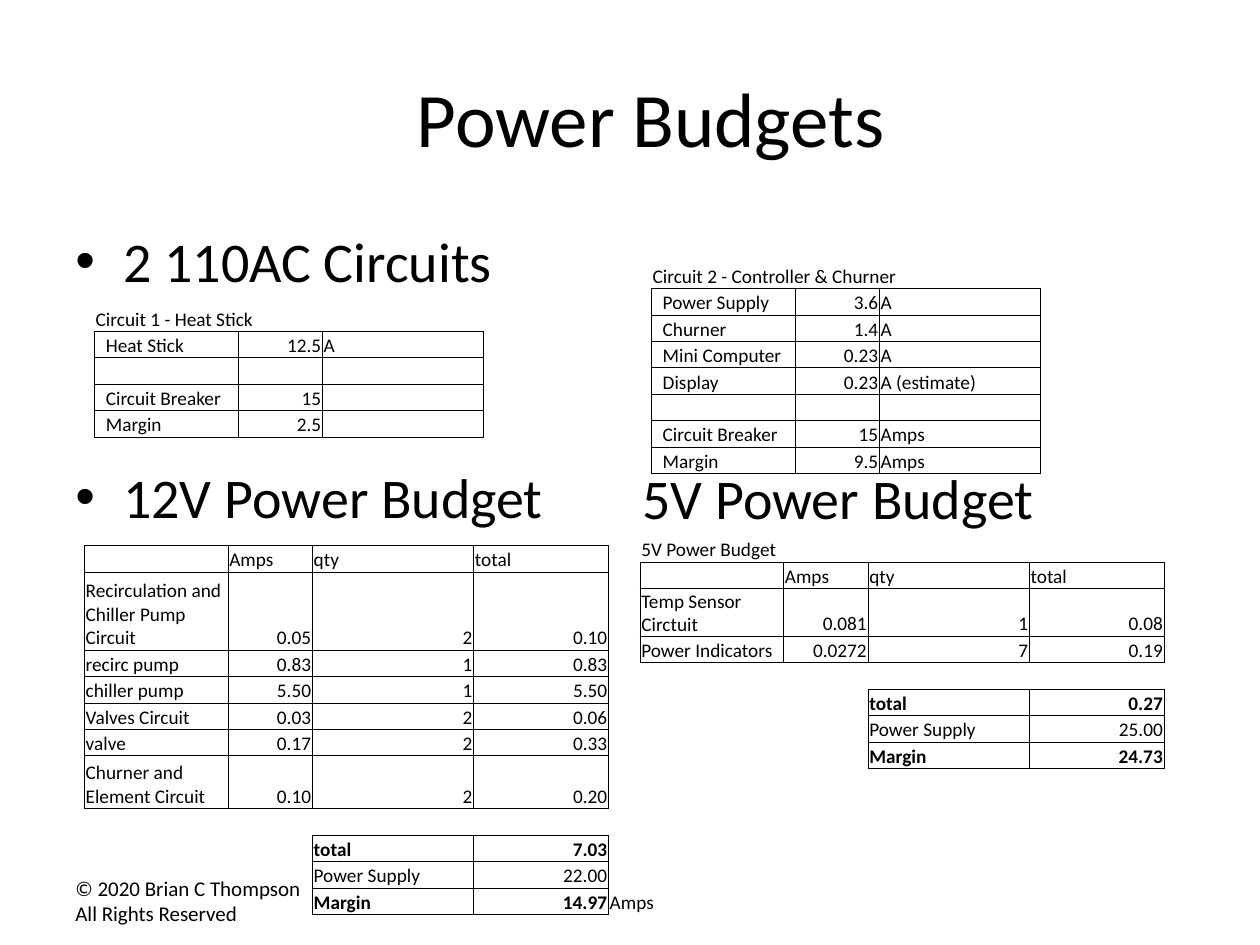
from lxml import etree
from pptx import Presentation
from pptx.dml.color import RGBColor
from pptx.enum import text as t
from pptx.oxml import ns
from pptx.util import Inches, Pt

THEME = dict(font="Calibri", ink="000000", line=0.5,
             title=44, body=32, cell=11, foot=12)

# In tables, None is an open cell and "" is an empty boxed cell.
COLS = (1.14, 0.67, 1.28, 1.07, 0.67)
ROW = 0.21
TABLES = [
    dict(at=(0.67, 4.33), cols=5, span=0, pad=0.01, tall={1: 0.62, 6: 0.42}, rows=[
        ("", "Amps", "qty", "total", None),
        ("Recirculation and Chiller Pump Circuit", "0.05", "2", "0.10", None),
        ("recirc pump", "0.83", "1", "0.83", None),
        ("chiller pump", "5.50", "1", "5.50", None),
        ("Valves Circuit", "0.03", "2", "0.06", None),
        ("valve", "0.17", "2", "0.33", None),
        ("Churner and Element Circuit", "0.10", "2", "0.20", None),
        (None, None, None, None, None),
        (None, None, "total", "7.03", None),
        (None, None, "Power Supply", "22.00", None),
        (None, None, "Margin", "14.97", "Amps"),
    ]),
    dict(at=(0.75, 2.42), cols=3, span=2, pad=0.09, tall={}, rows=[
        ("Circuit 1 - Heat Stick", None, None),
        ("Heat Stick", "12.5", "A"),
        ("", "", ""),
        ("Circuit Breaker", "15", ""),
        ("Margin", "2.5", ""),
    ]),
    dict(at=(5.08, 4.25), cols=4, span=2, pad=0.01, tall={2: 0.38}, rows=[
        ("5V Power Budget", None, None, None),
        ("", "Amps", "qty", "total"),
        ("Temp Sensor Circtuit", "0.081", "1", "0.08"),
        ("Power Indicators", "0.0272", "7", "0.19"),
        (None, None, None, None),
        (None, None, "total", "0.27"),
        (None, None, "Power Supply", "25.00"),
        (None, None, "Margin", "24.73"),
    ]),
    dict(at=(5.17, 2.08), cols=3, span=3, pad=0.09, tall={}, rows=[
        ("Circuit 2 - Controller & Churner", None, None),
        ("Power Supply", "3.6", "A"),
        ("Churner", "1.4", "A"),
        ("Mini Computer", "0.23", "A"),
        ("Display", "0.23", "A (estimate)"),
        ("", "", ""),
        ("Circuit Breaker", "15", "Amps"),
        ("Margin", "9.5", "Amps"),
    ]),
]
TITLE = "Power Budgets"
HEADS = ["2 110AC Circuits", "12V Power Budget"]
SIDE = "5V Power Budget"
FOOT = ["© 2020 Brian C Thompson", "All Rights Reserved"]
GAP = 96.4  # points between the two bulleted heads
SIDES = (("lnL", 0, -1), ("lnR", 0, 1), ("lnT", -1, 0), ("lnB", 1, 0))


def sub(node, tag, **attrs):
    return etree.SubElement(node, ns.qn("a:" + tag), **attrs)


def write(para, words, size, bold=False):
    run = para.add_run()
    run.text = words
    font = run.font
    font.name, font.size, font.bold = THEME["font"], Pt(size), bold
    font.color.rgb = RGBColor.from_string(THEME["ink"])


def put_box(slide, place, lines, size, anchor=t.MSO_ANCHOR.TOP, bullet=False):
    box = slide.shapes.add_textbox(*map(Inches, place))
    frame = box.text_frame
    frame.word_wrap, frame.vertical_anchor = True, anchor
    for i, words in enumerate(lines):
        para = frame.add_paragraph() if i else frame.paragraphs[0]
        if bullet:
            props = para._p.get_or_add_pPr()
            props.set("marL", str(Inches(0.38)))
            props.set("indent", str(-Inches(0.38)))
            sub(props, "buFont", typeface="Arial")
            sub(props, "buChar", char="•")
            if i:
                para.space_before = Pt(GAP)
        write(para, words, size)


def is_boxed(spec, r, c):
    rows = spec["rows"]
    if not (0 <= r < len(rows) and 0 <= c < min(4, spec["cols"])):
        return False
    return rows[r][c] is not None and not (r == 0 and spec["span"])


def edge(cell, spec, r, c):
    """Rule every side that touches a boxed cell and clear the others."""
    props = cell._tc.get_or_add_tcPr()
    for tag, down, right in SIDES:
        line = sub(props, tag, w=str(Pt(THEME["line"])))
        if is_boxed(spec, r, c) or is_boxed(spec, r + down, c + right):
            sub(sub(line, "solidFill"), "srgbClr", val=THEME["ink"])
        else:
            sub(line, "noFill")


def fill_cell(cell, spec, r, c):
    row = spec["rows"][r]
    words = row[c]
    edge(cell, spec, r, c)
    cell.fill.background()
    cell.vertical_anchor = t.MSO_ANCHOR.BOTTOM
    titled = r == 0 and spec["span"]
    cell.margin_left = Inches(0.01 if c or titled else spec["pad"])
    cell.margin_right = cell.margin_top = Inches(0.01)
    cell.margin_bottom = 0
    para = cell.text_frame.paragraphs[0]
    if not words:
        sub(para._p, "endParaRPr", sz=str(THEME["cell"] * 100))
        return
    if c and words[0].isdigit():
        para.alignment = t.PP_ALIGN.RIGHT
    strong = row[0] is None and row[2] in ("total", "Margin") and c in (2, 3)
    write(para, words, THEME["cell"], strong)


def put_table(slide, spec):
    rows, wide = spec["rows"], COLS[:spec["cols"]]
    high = [spec["tall"].get(r, ROW) for r in range(len(rows))]
    place = (*spec["at"], sum(wide), sum(high))
    table = slide.shapes.add_table(len(rows), len(wide), *map(Inches, place)).table
    table.first_row = table.horz_banding = False
    for col, size in zip(table.columns, wide):
        col.width = Inches(size)
    for row, size in zip(table.rows, high):
        row.height = Inches(size)
    for r in range(len(rows)):
        for c in range(len(wide)):
            fill_cell(table.cell(r, c), spec, r, c)
    if spec["span"]:
        table.cell(0, 0).merge(table.cell(0, spec["span"] - 1))


def main():
    deck = Presentation()
    deck.slide_width, deck.slide_height = Inches(10), Inches(7.5)
    slide = deck.slides.add_slide(deck.slide_layouts[5])
    head = slide.shapes.title
    head.left, head.top, head.width, head.height = map(Inches, (1.25, 0.3, 7.83, 1.25))
    head.text_frame.vertical_anchor = t.MSO_ANCHOR.MIDDLE
    para = head.text_frame.paragraphs[0]
    para.alignment = t.PP_ALIGN.CENTER
    write(para, TITLE, THEME["title"])

    put_box(slide, (0.5, 1.75, 4.5, 4.95), HEADS, THEME["body"], bullet=True)
    put_box(slide, (5, 3.63, 4.5, 0.65), [SIDE], THEME["body"])
    for spec in TABLES:
        put_table(slide, spec)
    put_box(slide, (0.5, 6.95, 2.33, 0.4), FOOT, THEME["foot"], t.MSO_ANCHOR.MIDDLE)
    deck.save("out.pptx")


if __name__ == "__main__":
    main()
